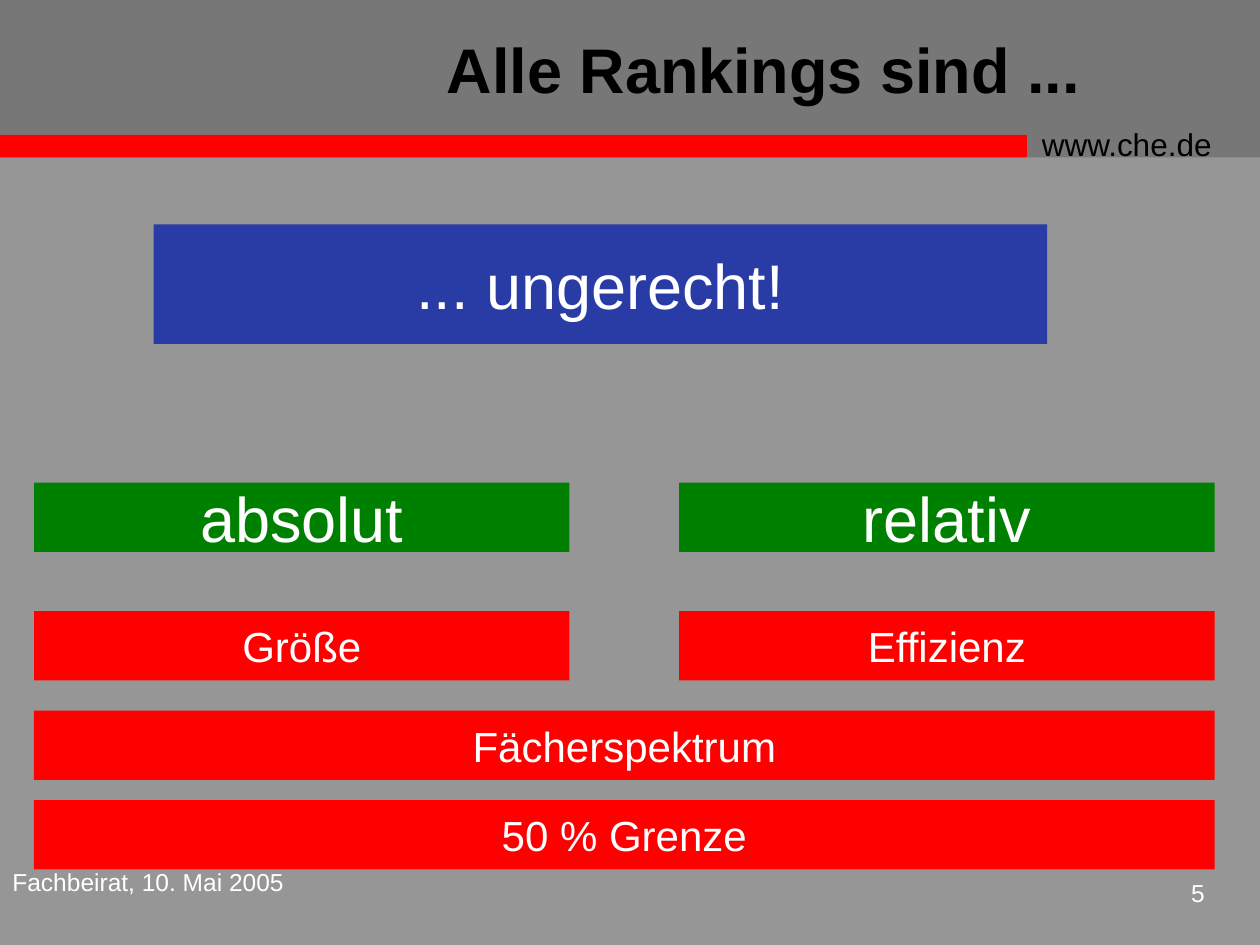
from dataclasses import dataclass

from pptx import Presentation
from pptx.dml.color import RGBColor
from pptx.enum.shapes import MSO_SHAPE
from pptx.enum.text import MSO_ANCHOR, PP_ALIGN
from pptx.util import Inches, Pt


@dataclass(frozen=True)
class Theme:
    font: str = "Arial"
    background: RGBColor = RGBColor(0x96, 0x96, 0x96)
    header: RGBColor = RGBColor(0x77, 0x77, 0x77)
    red: RGBColor = RGBColor(0xFF, 0x00, 0x00)
    blue: RGBColor = RGBColor(0x29, 0x3B, 0xA5)
    green: RGBColor = RGBColor(0x00, 0x80, 0x00)
    dark: RGBColor = RGBColor(0x00, 0x00, 0x00)
    light: RGBColor = RGBColor(0xFF, 0xFF, 0xFF)
    large: int = 36
    medium: int = 24
    web: int = 18
    small: int = 14


THEME = Theme()
LEFT, COLUMN, RIGHT, BAR = 0.27, 4.25, 9.64, 0.55


def write(sp, text, size, color, align=PP_ALIGN.LEFT,
          anchor=MSO_ANCHOR.TOP, bold=False, wrap=True):
    tf = sp.text_frame
    tf.word_wrap = wrap
    tf.vertical_anchor = anchor
    p = tf.paragraphs[0]
    p.alignment = align
    r = p.add_run()
    r.text = text
    formats = {"name": THEME.font, "size": Pt(size), "bold": bold}
    for name, value in formats.items():
        setattr(r.font, name, value)
    r.font.color.rgb = color


def add_box(s, box, fill, text=None, size=None):
    sp = s.shapes.add_shape(MSO_SHAPE.RECTANGLE, *map(Inches, box))
    sp.shadow.inherit = False
    sp.fill.solid()
    sp.fill.fore_color.rgb = fill
    sp.line.fill.background()
    if text:
        write(sp, text, size, THEME.light, PP_ALIGN.CENTER,
              MSO_ANCHOR.MIDDLE, wrap=False)


def add_text(s, box, text, size, color, **formats):
    sp = s.shapes.add_textbox(*map(Inches, box))
    write(sp, text, size, color, **formats)


def add_frame(s):
    add_box(s, (0, 0, 10, 1.25), THEME.header)
    add_box(s, (0, 1.07, 8.15, 0.18), THEME.red)
    add_text(s, (8.17, 0.94, 1.75, 0.4), "www.che.de", THEME.web, THEME.dark)
    add_text(s, (9.08, 6.92, 0.58, 0.42), "5", THEME.small, THEME.light,
             align=PP_ALIGN.RIGHT)
    add_text(s, (0, 6.83, 2.4, 0.5), "Fachbeirat, 10. Mai 2005",
             THEME.small, THEME.light)
    add_text(s, (2.48, 0, 7.16, 1.08), "Alle Rankings sind ...",
             THEME.large, THEME.dark, align=PP_ALIGN.CENTER,
             anchor=MSO_ANCHOR.MIDDLE, bold=True)


def add_row(s, top, labels, fill, size):
    width = COLUMN if len(labels) > 1 else RIGHT - LEFT
    for left, label in zip((LEFT, RIGHT - COLUMN), labels):
        add_box(s, (left, top, width, BAR), fill, label, size)


def main():
    prs = Presentation()
    prs.slide_width, prs.slide_height = Inches(10), Inches(7.5)
    s = prs.slides.add_slide(prs.slide_layouts[6])
    s.background.fill.solid()
    s.background.fill.fore_color.rgb = THEME.background

    add_frame(s)
    add_box(s, (1.22, 1.78, 7.09, 0.95), THEME.blue,
            "... ungerecht!", THEME.large)
    add_row(s, 3.83, ["absolut", "relativ"], THEME.green, THEME.large)
    criteria = [
        (4.85, ["Größe", "Effizienz"]),
        (5.64, ["Fächerspektrum"]),
        (6.35, ["50 % Grenze"]),
    ]
    for top, labels in criteria:
        add_row(s, top, labels, THEME.red, THEME.medium)

    prs.save("out.pptx")


if __name__ == "__main__":
    main()
